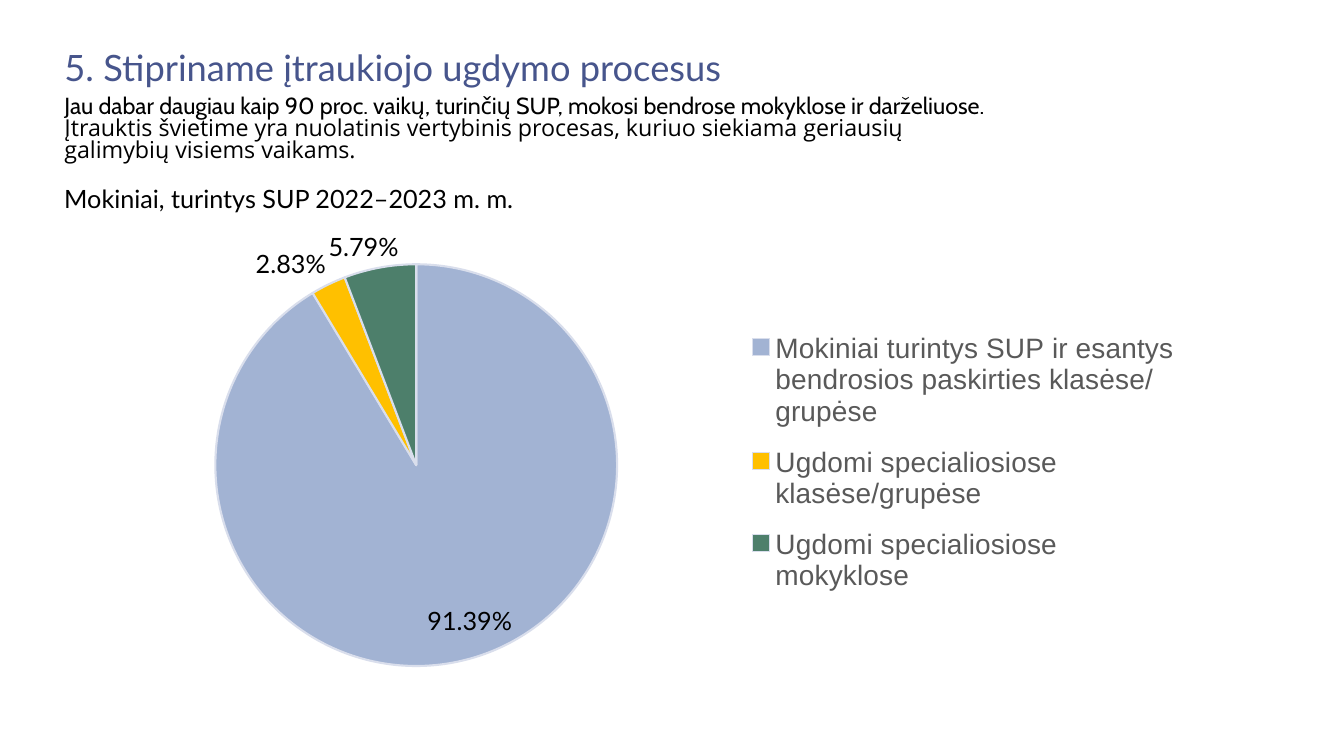
import pptx
import pptx.util
import pptx.chart.data
import pptx.dml.color
import pptx.enum.chart
import pptx.enum.text
import pptx.oxml

Cm = pptx.util.Cm
Pt = pptx.util.Pt
enum = pptx.enum

theme = {
    "ink": "000000", "head": "47558C", "key": "595959", "edge": "D9DEEC",
    "slices": ["A2B3D3", "FFC000", "4D7F6B"],
    "big": 25.9, "lead": 16.6, "text": 18, "legend": 20,
}


def paint(item, color):
    item.rgb = pptx.dml.color.RGBColor.from_string(color)


def style(font, name, size, color):
    for key, val in {"name": name, "size": Pt(size), "bold": False}.items():
        setattr(font, key, val)
    paint(font.color, color)


deck = pptx.Presentation()
deck.slide_width, deck.slide_height = Cm(33.87), Cm(19.05)
slide = deck.slides.add_slide(deck.slide_layouts[5])

title = slide.shapes.title
note = slide.shapes.add_textbox(0, 0, Cm(1), Cm(1))
boxes = [
    (title, (1.37, 1.14, 24.56, 3.18), enum.text.MSO_ANCHOR.MIDDLE, 0.6,
     {"line_spacing": 0.8, "space_before": Pt(0), "space_after": Pt(6)},
     [[("5. Stipriname įtraukiojo ugdymo procesus", "Lato", "big", "head")],
      [("Jau dabar daugiau kaip 90 proc. vaikų, turinčių SUP, mokosi bendrose mokyklose ir darželiuose. ",
        "Cabin", "lead", "ink"),
       ("Įtrauktis švietime yra nuolatinis vertybinis procesas, kuriuo siekiama geriausių galimybių visiems vaikams.",
        "Open Sans", "lead", "ink")]]),
    (note, (1.37, 4.5, 21, 1.4), enum.text.MSO_ANCHOR.TOP, 0.25,
     {"space_before": Pt(10)},
     [[("Mokiniai, turintys SUP 2022–2023 m. m.", "Lato", "text", "ink")]]),
]
for shape, place, anchor, right, rules, paras in boxes:
    for key, val in zip(("left", "top", "width", "height"), place):
        setattr(shape, key, Cm(val))
    frame = shape.text_frame
    looks = {"word_wrap": True, "auto_size": enum.text.MSO_AUTO_SIZE.NONE,
             "vertical_anchor": anchor, "margin_right": Cm(right)}
    for key, val in looks.items():
        setattr(frame, key, val)
    for num, runs in enumerate(paras):
        para = frame.add_paragraph() if num else frame.paragraphs[0]
        for key, val in {"alignment": enum.text.PP_ALIGN.LEFT, **rules}.items():
            setattr(para, key, val)
        for words, face, size, color in runs:
            run = para.add_run()
            run.text = words
            style(run.font, face, theme[size], theme[color])

data = pptx.chart.data.CategoryChartData(number_format="0.00")
data.categories = [
    "Mokiniai turintys SUP ir esantys bendrosios paskirties klasėse/grupėse",
    "Ugdomi specialiosiose klasėse/grupėse",
    "Ugdomi specialiosiose mokyklose",
]
data.add_series("Series 1", [91.39, 2.83, 5.79])
chart = slide.shapes.add_chart(
    enum.chart.XL_CHART_TYPE.PIE, Cm(1.68), Cm(5.41), Cm(28.42), Cm(12.5), data).chart
chart.has_title = False
style(chart.font, "Arial", 10, theme["ink"])

chart.has_legend = True
legend = chart.legend
legend.position = enum.chart.XL_LEGEND_POSITION.RIGHT
legend.include_in_layout = False
style(legend.font, "Arial", theme["legend"], theme["key"])

plot = chart.plots[0]
plot.vary_by_categories = True
for num, color in enumerate(theme["slices"]):
    form = plot.series[0].points[num].format
    form.fill.solid()
    paint(form.fill.fore_color, color)
    paint(form.line.color, theme["edge"])
    form.line.width = Pt(1.5)

plot.has_data_labels = True
labels = plot.data_labels
looks = {"show_value": True, "show_percentage": False, "number_format": '0.00"%"',
         "number_format_is_linked": False,
         "position": enum.chart.XL_LABEL_POSITION.BEST_FIT}
for key, val in looks.items():
    setattr(labels, key, val)
style(labels.font, "Lato", theme["text"], theme["ink"])

space = "http://schemas.openxmlformats.org/drawingml/2006/chart"
area = chart.element.find(f".//{{{space}}}plotArea")
key = chart.element.find(f".//{{{space}}}legend")
for part, inner, frac in [(area, '<c:layoutTarget val="inner"/>', (0.13, 0.1, 0.36, 0.81)),
                          (key, "", (0.6, 0.2, 0.39, 0.6))]:
    for old in part.findall(f"{{{space}}}layout"):
        part.remove(old)
    sizes = "".join(f'<c:{tag} val="{val}"/>' for tag, val in zip("xywh", frac))
    layout = pptx.oxml.parse_xml(
        f'<c:layout xmlns:c="{space}"><c:manualLayout>{inner}'
        f'<c:xMode val="edge"/><c:yMode val="edge"/>{sizes}</c:manualLayout></c:layout>')
    part.insert(1 if part is key else 0, layout)

deck.save("out.pptx")
